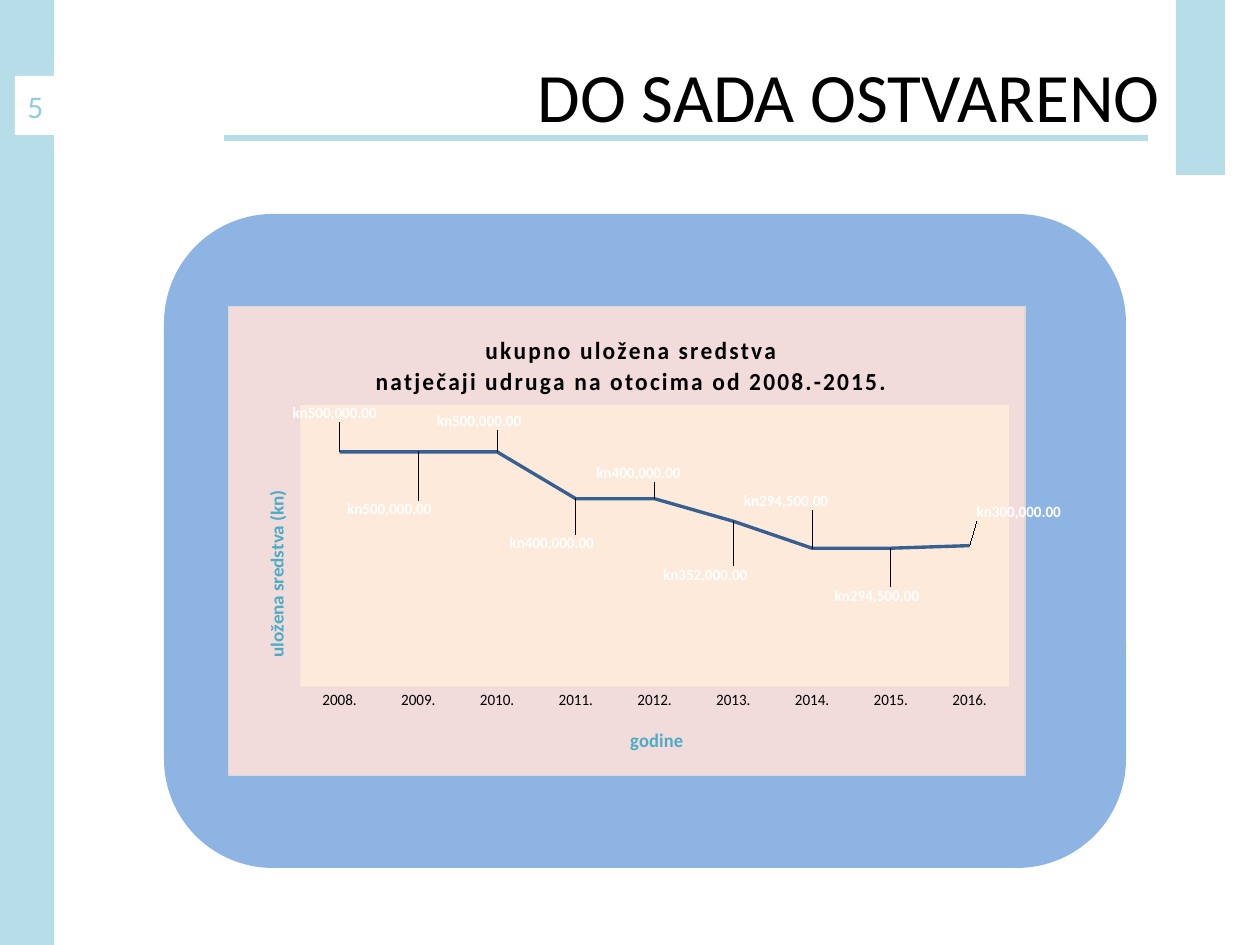
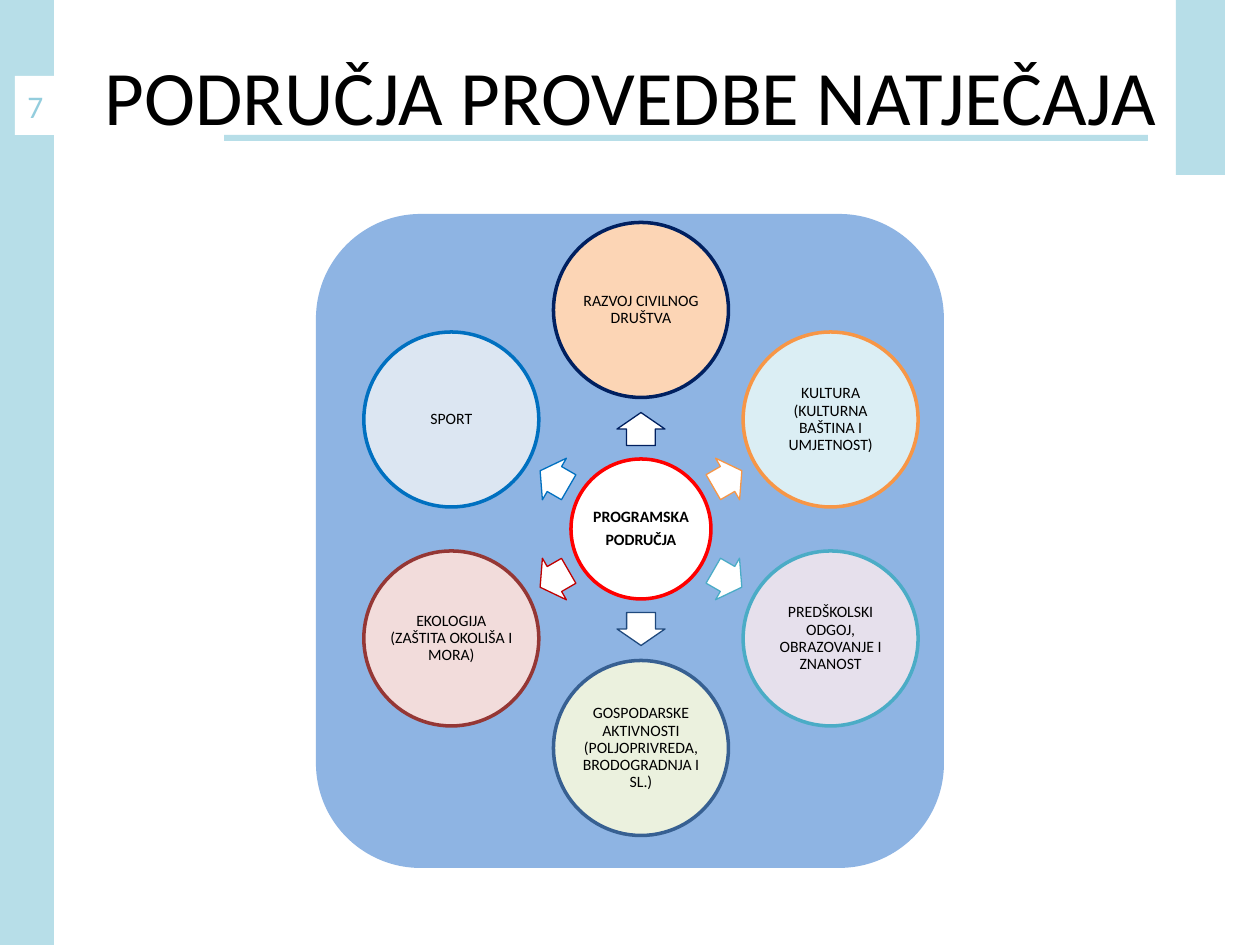
import math

from lxml import etree
from pptx import Presentation, util as u
from pptx.chart import data as chart_data
from pptx.dml.color import RGBColor
from pptx.enum import chart as chart_enum, shapes, text
from pptx.oxml import parse_xml
from pptx.oxml.ns import nsdecls, qn

EMU_PER_PX = 914400 / 126
FONT = "Calibri"

BLACK = RGBColor(0x00, 0x00, 0x00)
WHITE = RGBColor(0xFF, 0xFF, 0xFF)
BAND = RGBColor(0xB7, 0xDE, 0xE8)
NUMBER = RGBColor(0x93, 0xCD, 0xDD)
PANEL = RGBColor(0x8E, 0xB4, 0xE3)
PINK = RGBColor(0xF2, 0xDC, 0xDB)
CREAM = RGBColor(0xFD, 0xEA, 0xDA)
GREY = RGBColor(0xD9, 0xD9, 0xD9)
LABEL = RGBColor(0x95, 0xB3, 0xD7)
STEEL = RGBColor(0x37, 0x60, 0x92)
AQUA = RGBColor(0x4B, 0xAC, 0xC6)
RED = RGBColor(0xFF, 0x00, 0x00)
NAVY = RGBColor(0x00, 0x20, 0x60)
ORANGE = RGBColor(0xF7, 0x96, 0x46)
DARK_BLUE = RGBColor(0x1F, 0x49, 0x7D)
CRIMSON = RGBColor(0xC0, 0x00, 0x00)
MAROON = RGBColor(0x95, 0x37, 0x35)
BLUE = RGBColor(0x00, 0x70, 0xC0)
PEACH = RGBColor(0xFC, 0xD5, 0xB5)
ICE = RGBColor(0xDB, 0xEE, 0xF4)
LILAC = RGBColor(0xE6, 0xE0, 0xEC)
PALE_GREEN = RGBColor(0xEB, 0xF1, 0xDE)
PALE_BLUE = RGBColor(0xDC, 0xE6, 0xF2)

KUNA_FORMAT = '"kn"#,##0.00'
YEARS = [f"{year}." for year in range(2008, 2017)]
FUNDS = [500000, 500000, 500000, 400000, 400000, 352000, 294500, 294500, 300000]
CHART_HEIGHT = 470
CHART_INNER_WIDTH = 794  # width left for the chart beside the last, overhanging label
LABEL_SHIFTS = [(-5, -39), (-29, 58), (-18, -31), (-24, 45), (-16, -26),
                (-28, 54), (-26, -47), (-14, 48), (49, -33)]

# Clockwise from the top: text, fill, outline, arrow outline
AREAS = [
    ("RAZVOJ CIVILNOG DRUŠTVA", PEACH, NAVY, NAVY),
    ("KULTURA (KULTURNA BAŠTINA I UMJETNOST)", ICE, ORANGE, ORANGE),
    ("PREDŠKOLSKI ODGOJ, OBRAZOVANJE I ZNANOST", LILAC, AQUA, AQUA),
    ("GOSPODARSKE AKTIVNOSTI (POLJOPRIVREDA, BRODOGRADNJA I SL.)",
     PALE_GREEN, STEEL, DARK_BLUE),
    ("EKOLOGIJA (ZAŠTITA OKOLIŠA I MORA)", PINK, MAROON, CRIMSON),
    ("SPORT", PALE_BLUE, BLUE, BLUE),
]
HUB = (641, 529)


def px(length):
    return u.Emu(round(length * EMU_PER_PX))


def set_font(font, size, color, bold=False):
    font.name = FONT
    font.size = u.Pt(size)
    font.color.rgb = color
    font.bold = bold


def add_shape(slide, kind, left, top, width, height, fill, line=None, line_width=2):
    shape = slide.shapes.add_shape(kind, px(left), px(top), px(width), px(height))
    shape.shadow.inherit = False
    shape.fill.solid()
    shape.fill.fore_color.rgb = fill
    if line is None:
        shape.line.fill.background()
    else:
        shape.line.color.rgb = line
        shape.line.width = u.Pt(line_width)
    return shape


def add_rectangle(slide, left, top, width, height, fill):
    return add_shape(slide, shapes.MSO_SHAPE.RECTANGLE, left, top, width, height, fill)


def add_panel(slide, left, width):
    add_shape(slide, shapes.MSO_SHAPE.ROUNDED_RECTANGLE, left, 214, width, 654, PANEL)


def add_titled_slide(presentation, title, size, number, alignment):
    """Add a slide with the shared bands, number box, underline and title."""
    slide = presentation.slides.add_slide(presentation.slide_layouts[5])
    placeholder = slide.shapes.title
    placeholder.left, placeholder.top = px(64), px(16)
    placeholder.width, placeholder.height = px(1134), px(158)
    frame = placeholder.text_frame
    frame.text = title
    frame.auto_size = text.MSO_AUTO_SIZE.NONE
    frame.vertical_anchor = text.MSO_ANCHOR.MIDDLE
    if alignment == text.PP_ALIGN.RIGHT:
        frame.margin_right = px(38)
    paragraph = frame.paragraphs[0]
    paragraph.alignment = alignment
    set_font(paragraph.font, size, BLACK)

    add_rectangle(slide, 0, 0, 54, 945, BAND)
    add_rectangle(slide, 1176, 0, 49, 175, BAND)
    add_rectangle(slide, 224, 135, 924, 6, BAND)
    box = add_rectangle(slide, 15, 76, 49, 59, WHITE)
    box.text_frame.text = number
    set_font(box.text_frame.paragraphs[0].font, 18, NUMBER)
    return slide


def set_layout(element, index, inner=False, **values):
    """Give a chart element a manual layout in fractions of the chart."""
    old = element.find(qn("c:layout"))
    if old is not None:
        element.remove(old)
    layout = parse_xml(f"<c:layout {nsdecls('c')}><c:manualLayout/></c:layout>")
    settings = {"layoutTarget": "inner"} if inner else {}
    if "w" in values or index == 1 and element.tag == qn("c:title"):
        settings.update(xMode="edge", yMode="edge")
    settings.update({name: f"{value:.4f}" for name, value in values.items()})
    for name, value in settings.items():
        etree.SubElement(layout[0], qn(f"c:{name}")).set("val", value)
    element.insert(index, layout)


def fill_properties(fill, border=None):
    line = (f'<a:ln w="9525"><a:solidFill><a:srgbClr val="{border}"/></a:solidFill></a:ln>'
            if border else "<a:ln><a:noFill/></a:ln>")
    return parse_xml(f'<c:spPr {nsdecls("c", "a")}><a:solidFill><a:srgbClr val="{fill}"/>'
                     f"</a:solidFill>{line}</c:spPr>")


def set_chart_title(title, lines, size, color, x, y, spacing=0):
    title.text_frame.text = "\n".join(lines)
    for paragraph in title.text_frame.paragraphs:
        set_font(paragraph.font, size, color, True)
        for run in paragraph.runs:
            set_font(run.font, size, color, True)
            if spacing:
                run.font._element.set("spc", str(spacing))
    set_layout(title.element, 1, x=x, y=y)


def style_labels(labels):
    labels.position = chart_enum.XL_LABEL_POSITION.CENTER
    set_font(labels.font, 9, WHITE, True)


def add_point_labels(chart, series):
    series.data_labels.show_value = True
    series.data_labels.number_format = KUNA_FORMAT
    series.data_labels.number_format_is_linked = False
    style_labels(series.data_labels)
    for index in range(len(FUNDS)):
        style_labels(series.points[index].data_label)
    for label, (dx, dy) in zip(chart.element.iter(qn("c:dLbl")), LABEL_SHIFTS):
        set_layout(label, 1, x=dx / CHART_INNER_WIDTH, y=dy / CHART_HEIGHT)
        number_format = parse_xml(f"<c:numFmt {nsdecls('c')} sourceLinked='0'/>")
        number_format.set("formatCode", KUNA_FORMAT)
        label.insert(2, number_format)
        label.insert(3, fill_properties(LABEL))


def add_funds_chart(slide):
    data = chart_data.CategoryChartData(number_format=KUNA_FORMAT)
    data.categories = YEARS
    data.add_series("Series 1", FUNDS)
    chart = slide.shapes.add_chart(chart_enum.XL_CHART_TYPE.LINE, px(228), px(306),
                                   px(833), px(CHART_HEIGHT), data).chart
    set_font(chart.font, 10, BLACK)
    chart.has_legend = False
    chart.has_title = True
    set_chart_title(chart.chart_title,
                    ["ukupno uložena sredstva", "natječaji udruga na otocima od 2008.-2015."],
                    14, BLACK, 0.18, 0.05, spacing=120)

    years = chart.category_axis
    years.major_tick_mark = chart_enum.XL_TICK_MARK.NONE
    years.format.line.fill.background()
    set_font(years.tick_labels.font, 9, BLACK)
    set_chart_title(years.axis_title, ["godine"], 11, AQUA, 0.5, 0.89)

    funds = chart.value_axis
    funds.minimum_scale, funds.maximum_scale = 0, 600000
    funds.has_major_gridlines = False
    set_chart_title(funds.axis_title, ["uložena sredstva (kn)"], 11, AQUA, 0.04, 0.37)
    body = next(funds.axis_title.element.iter(qn("a:bodyPr")))
    body.set("rot", "-5400000")
    body.set("vert", "horz")
    funds.visible = False

    plot = chart.plots[0]
    plot.vary_by_categories = False
    series = plot.series[0]
    series.smooth = False
    series.marker.style = chart_enum.XL_MARKER_STYLE.NONE
    series.format.line.color.rgb = STEEL
    series.format.line.width = u.Pt(2)
    add_point_labels(chart, series)

    plot_area = next(chart.element.iter(qn("c:plotArea")))
    set_layout(plot_area, 0, inner=True, x=0.09, y=0.21, w=0.89, h=0.6)
    plot_area.append(fill_properties(CREAM))
    chart.element.find(qn("c:chart")).addnext(fill_properties(PINK, GREY))


def polar(radius, angle):
    """Return the point at this distance and angle (degrees) from the hub."""
    radians = math.radians(angle)
    return HUB[0] + radius * math.cos(radians), HUB[1] + radius * math.sin(radians)


def add_circle(slide, center, diameter, lines, fill, line, bold=False):
    circle = add_shape(slide, shapes.MSO_SHAPE.OVAL, center[0] - diameter / 2,
                       center[1] - diameter / 2, diameter, diameter, fill, line)
    frame = circle.text_frame
    frame.word_wrap = True
    frame.margin_left = frame.margin_right = frame.margin_top = frame.margin_bottom = px(1)
    frame.text = "\n".join(lines)
    for paragraph in frame.paragraphs:
        paragraph.alignment = text.PP_ALIGN.CENTER
        paragraph.line_spacing = 0.9
        paragraph.space_after = u.Pt(3)
        set_font(paragraph.font, 9, BLACK, bold)


def add_arrow(slide, angle, line):
    x, y = polar(100, angle)
    arrow = add_shape(slide, shapes.MSO_SHAPE.RIGHT_ARROW, x - 16.5, y - 24, 33, 48,
                      WHITE, line, 0.75)
    arrow.adjustments[0] = 0.6
    arrow.adjustments[1] = 0.5
    arrow.rotation = angle % 360


def add_area_wheel(slide):
    add_circle(slide, HUB, 140, ["PROGRAMSKA", "PODRUČJA"], WHITE, RED, bold=True)
    for index, (name, fill, line, arrow_line) in enumerate(AREAS):
        angle = index * 360 // len(AREAS) - 90
        add_arrow(slide, angle, arrow_line)
        add_circle(slide, polar(219, angle), 175, [name], fill, line)


def main():
    presentation = Presentation()
    presentation.slide_width, presentation.slide_height = px(1260), px(945)

    slide = add_titled_slide(presentation, "DO SADA OSTVARENO", 39.6, "5", text.PP_ALIGN.RIGHT)
    add_panel(slide, 164, 962)
    add_funds_chart(slide)

    slide = add_titled_slide(presentation, "PODRUČJA PROVEDBE NATJEČAJA", 44, "7",
                             text.PP_ALIGN.CENTER)
    add_panel(slide, 316, 628)
    add_area_wheel(slide)

    presentation.save("out.pptx")


if __name__ == "__main__":
    main()
